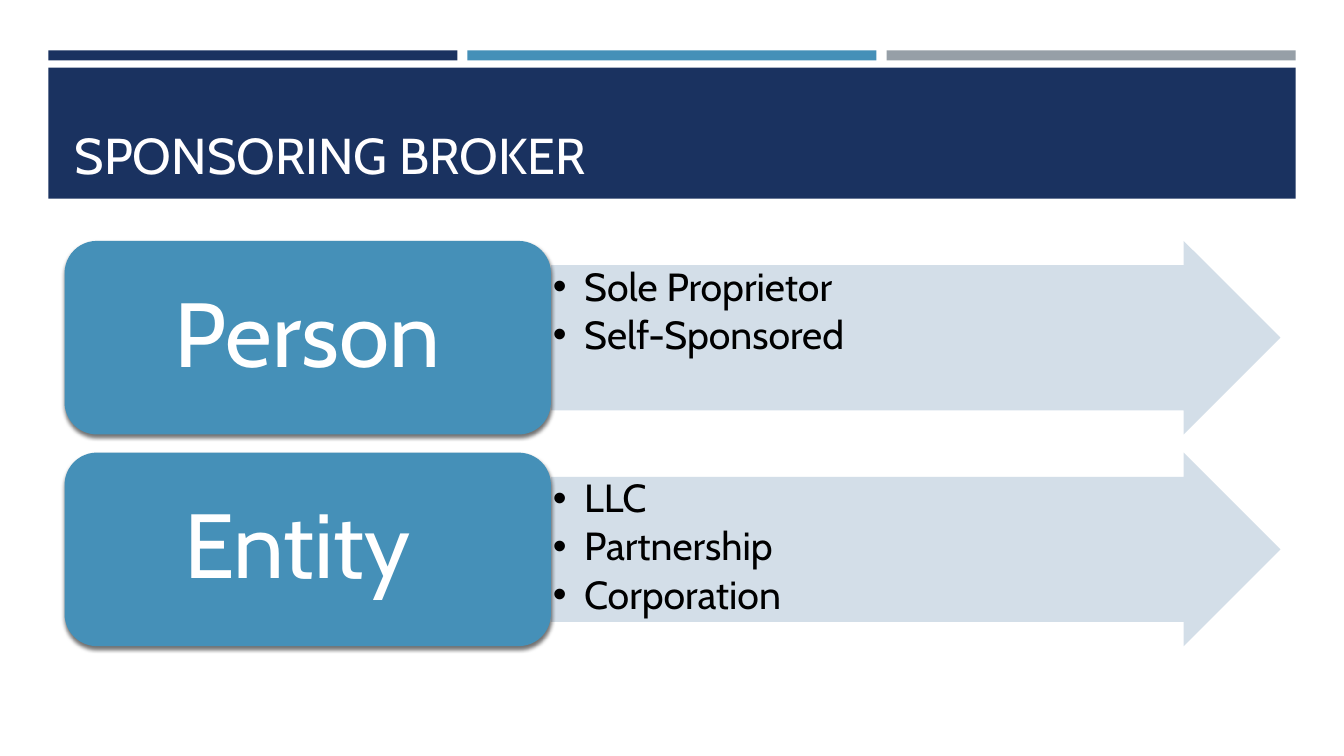
from lxml import etree
from pptx import Presentation
from pptx.dml.color import RGBColor
from pptx.enum import shapes, text
from pptx.oxml import ns
from pptx.util import Inches, Pt

NAVY = RGBColor(0x1A, 0x32, 0x60)
BLUE = RGBColor(0x45, 0x90, 0xB8)
GRAY = RGBColor(0x96, 0x9F, 0xA7)
PALE = RGBColor(0xCF, 0xDB, 0xE6)
TITLE_WHITE = RGBColor(0xFF, 0xFE, 0xFF)
WHITE = RGBColor(0xFF, 0xFF, 0xFF)
BLACK = RGBColor(0, 0, 0)
FONT = "Cabin"
ROWS = [
    ("Person", ["Sole Proprietor", "Self-Sponsored"]),
    ("Entity ", ["LLC", "Partnership", "Corporation"]),
]


def set_values(target, values):
    """Set each named attribute of the target."""
    for name, value in values.items():
        setattr(target, name, value)


def add_element(parent, tag, **attributes):
    """Append a drawing element and return it."""
    return etree.SubElement(parent, ns.qn(tag), attributes)


def add_block(page, kind, box, color):
    """Add a flat filled shape in the box."""
    block = page.shapes.add_shape(kind, *map(Inches, box))
    block.shadow.inherit = False
    block.fill.solid()
    block.fill.fore_color.rgb = color
    block.line.fill.background()
    return block


def set_frame(frame, anchor, inset_x, inset_y):
    """Set anchor, wrapping and insets of a text frame."""
    set_values(frame, {
        "word_wrap": True, "vertical_anchor": anchor,
        "auto_size": text.MSO_AUTO_SIZE.NONE,
        "margin_left": Inches(inset_x), "margin_right": Inches(inset_x),
        "margin_top": Inches(inset_y), "margin_bottom": Inches(inset_y),
    })


def write(para, words, size, color, align=text.PP_ALIGN.LEFT):
    """Write one formatted span into a paragraph."""
    para.alignment = align
    span = para.add_run()
    span.text = words
    set_values(span.font, {"name": FONT, "size": Pt(size), "bold": False})
    span.font.color.rgb = color


def add_header(page, box):
    """Place the three accent bars, the band and the title in the box."""
    left, top, width, height = box
    gap = 0.1
    bar_width = (width - 2 * gap) / 3
    for index, color in enumerate((NAVY, BLUE, GRAY)):
        bar_left = left + index * (bar_width + gap)
        add_block(page, shapes.MSO_SHAPE.RECTANGLE, (bar_left, top, bar_width, 0.1), color)
    band_top = top + 0.17
    band_height = height - 0.17
    add_block(page, shapes.MSO_SHAPE.RECTANGLE, (left, band_top, width, band_height), NAVY)

    title = page.shapes.title
    title.element.getparent().append(title.element)
    set_values(title, {
        "left": Inches(left + 0.16), "top": Inches(band_top + 0.1),
        "width": Inches(width - 0.31), "height": Inches(band_height - 0.19),
    })
    set_frame(title.text_frame, text.MSO_ANCHOR.BOTTOM, 0.1, 0.05)
    write(title.text_frame.paragraphs[0], "SPONSORING BROKER", 36, TITLE_WHITE)


def add_arrow(page, box, items):
    """Place a pale arrow holding a bulleted list."""
    arrow = add_block(page, shapes.MSO_SHAPE.RIGHT_ARROW, box, PALE)
    arrow.adjustments[0] = 0.75
    arrow.adjustments[1] = 0.5
    solid = arrow.element.spPr.find(ns.qn("a:solidFill"))
    add_element(solid[0], "a:alpha", val="90000")
    frame = arrow.text_frame
    set_frame(frame, text.MSO_ANCHOR.TOP, 0.02, 0.02)
    for index, item in enumerate(items):
        para = frame.add_paragraph() if index else frame.paragraphs[0]
        properties = para._p.get_or_add_pPr()
        properties.set("marL", str(Inches(0.31)))
        properties.set("indent", str(-Inches(0.31)))
        add_element(properties, "a:buFont", typeface="Arial")
        add_element(properties, "a:buChar", char="•")
        set_values(para, {"line_spacing": 0.9, "space_after": Pt(4.2)})
        write(para, item, 28, BLACK)


def add_label(page, box, words):
    """Place a rounded label with a soft shadow."""
    label = add_block(page, shapes.MSO_SHAPE.ROUNDED_RECTANGLE, box, BLUE)
    effects = label.element.spPr.find(ns.qn("a:effectLst"))
    shadow = add_element(effects, "a:outerShdw", blurRad=str(Pt(3)), dist=str(Pt(2)),
                         dir="5400000", algn="ctr", rotWithShape="0")
    shade = add_element(shadow, "a:srgbClr", val=str(BLACK))
    add_element(shade, "a:alpha", val="55000")
    set_frame(label.text_frame, text.MSO_ANCHOR.MIDDLE, 0.27, 0.14)
    para = label.text_frame.paragraphs[0]
    para.line_spacing = 0.9
    write(para, words, 65, WHITE, text.PP_ALIGN.CENTER)


def add_rows(page, box):
    """Stack the label and arrow rows evenly in the box."""
    left, top, width, height = box
    gap = 0.18
    row_height = (height - gap * (len(ROWS) - 1)) / len(ROWS)
    label_width = width * 0.4
    for index, (words, items) in enumerate(ROWS):
        row_top = top + index * (row_height + gap)
        arrow_box = (left + label_width, row_top, width - label_width, row_height)
        add_arrow(page, arrow_box, items)
        add_label(page, (left, row_top, label_width, row_height), words)


def main():
    """Build and save the deck."""
    deck = Presentation()
    deck.slide_width = Inches(13.33)
    deck.slide_height = Inches(7.5)
    page = deck.slides.add_slide(deck.slide_layouts[5])
    add_header(page, (0.48, 0.5, 12.37, 1.47))
    add_rows(page, (0.64, 2.39, 12.06, 4.02))
    deck.save("out.pptx")


if __name__ == "__main__":
    main()
